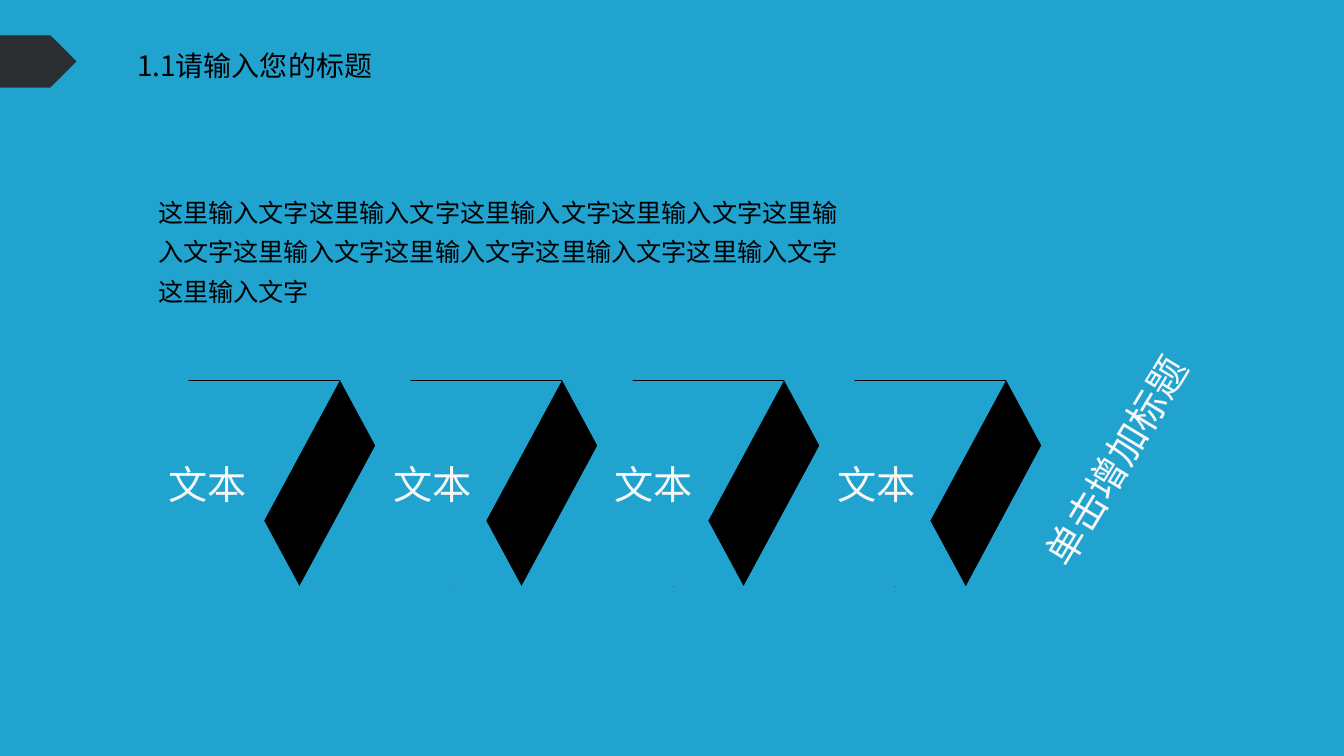
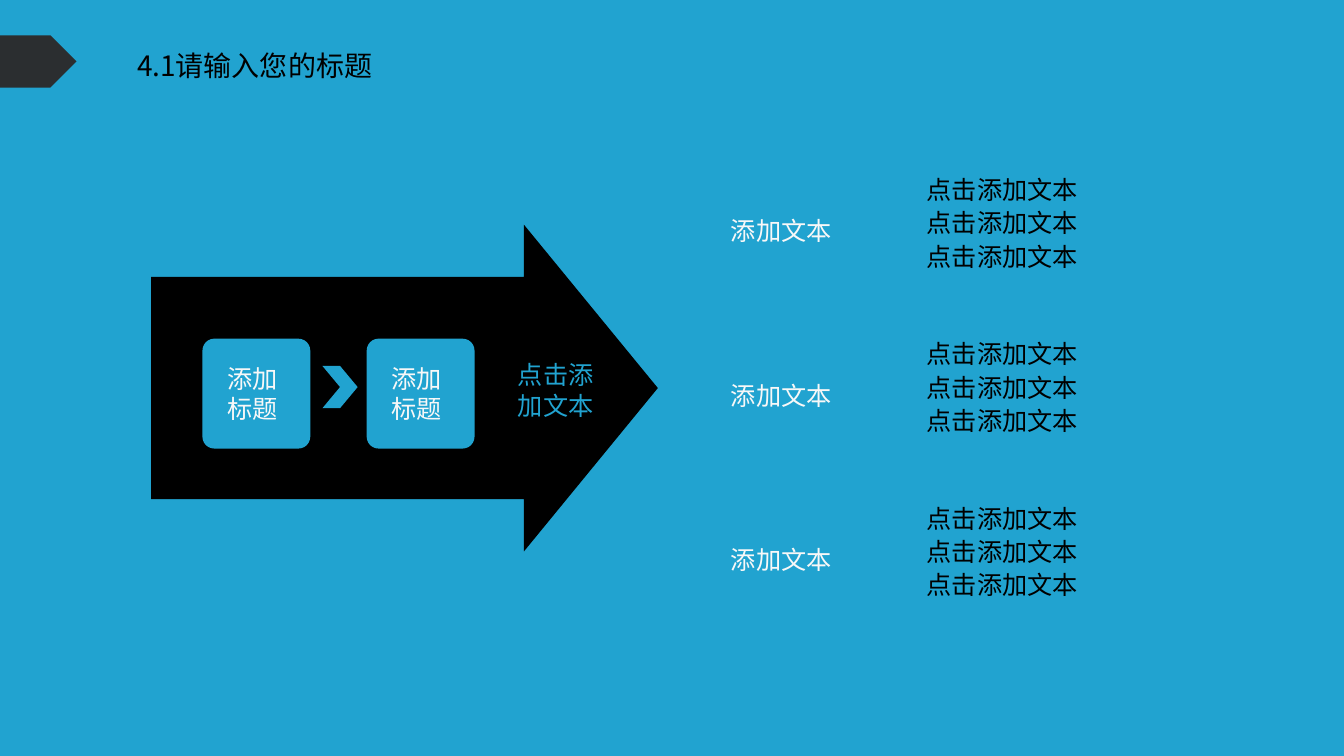
from lxml.etree import SubElement
from pptx import Presentation
from pptx.dml.color import RGBColor
from pptx.enum.shapes import MSO_SHAPE
from pptx.enum.text import MSO_ANCHOR, MSO_AUTO_SIZE, PP_ALIGN
from pptx.util import Inches, Pt
from pptx.oxml.ns import qn

COLORS = {"sky": "21A3D0", "ink": "000000", "paper": "F8F8F8", "band": "2B2E30"}
FONT = "Noto Sans CJK SC"
COLUMNS, ROWS = 133.4, 75
TITLE_ONLY = 5


def grid(*cells):
    """Turn grid cells, a tenth of an inch each, into slide lengths."""
    return [Inches(cell / 10) for cell in cells]


class Deck:
    """Shared style and the slide being drawn."""

    def __init__(self):
        self.presentation = Presentation()
        self.presentation.slide_width, self.presentation.slide_height = grid(COLUMNS, ROWS)
        self.fill(self.presentation.slide_master.background, "sky")
        self.slide = None

    def fill(self, target, color):
        target.fill.solid()
        target.fill.fore_color.rgb = RGBColor.from_string(COLORS[color])

    def finish(self, shape, color):
        self.fill(shape, color)
        shape.line.fill.background()
        shape.shadow.inherit = False
        return shape

    def set_text(self, shape, lines, size, color, align=PP_ALIGN.LEFT,
                 anchor=MSO_ANCHOR.TOP, spacing=1.0):
        frame = shape.text_frame
        frame.word_wrap = True
        frame.auto_size = MSO_AUTO_SIZE.NONE
        frame.vertical_anchor = anchor
        for index, line in enumerate(lines):
            paragraph = frame.add_paragraph() if index else frame.paragraphs[0]
            paragraph.alignment = align
            paragraph.line_spacing = spacing
            run = paragraph.add_run()
            run.text = line
            run.font.size = Pt(size)
            run.font.name = FONT
            run.font.color.rgb = RGBColor.from_string(COLORS[color])
            # East Asian typeface
            SubElement(run.font._element, qn("a:ea"), typeface=FONT)

    def new_slide(self, title):
        layout = self.presentation.slide_layouts[TITLE_ONLY]
        self.slide = self.presentation.slides.add_slide(layout)
        heading = self.slide.shapes.title
        heading.left, heading.top, heading.width, heading.height = grid(12.6, 4.3, 25.6, 4.4)
        self.set_text(heading, [title], 20, "ink")
        self.shape(MSO_SHAPE.PENTAGON, (0, 3.5, 7.6, 5.2), "band", 0.5)

    def shape(self, kind, place, color, *adjustments):
        shape = self.slide.shapes.add_shape(kind, *grid(*place))
        for index, value in enumerate(adjustments):
            shape.adjustments[index] = value
        return self.finish(shape, color)

    def text(self, place, lines, size, color, rotation=0, **layout):
        box = self.slide.shapes.add_textbox(*grid(*place))
        box.rotation = rotation
        self.set_text(box, lines, size, color, **layout)

    def outline(self, points, color):
        corners = [grid(*point) for point in points]
        builder = self.slide.shapes.build_freeform(*corners[0])
        builder.add_line_segments(corners[1:], close=True)
        self.finish(builder.convert_to_shape(), color)


def draw_folded_steps(deck):
    deck.new_slide("1.1请输入您的标题")
    pitch, size = 22.04, (26.1, 20.5)

    # Dark folds lie behind the sky-coloured panels
    for step in range(4):
        fold = deck.shape(MSO_SHAPE.PARALLELOGRAM, (18.7 + step * pitch, 37.7, *size), "ink", 0.54)
        fold._element.spPr.xfrm.set("flipH", "1")
    for step, label_left in enumerate((15.7, 38.1, 60, 82.1)):
        deck.shape(MSO_SHAPE.PARALLELOGRAM, (7.6 + step * pitch, 37.8, *size), "sky", 0.54)
        deck.text((label_left, 45.2, 9.9, 5.7), ["文本"], 28, "paper")

    # Closing arrow and its slanted label
    deck.outline([(121, 25.7), (126.8, 40.4), (122.1, 37.9), (117.2, 47), (110.9, 58.3),
                  (95.8, 58.3), (106.8, 37.8), (110.3, 31.7), (105.6, 29.2)], "sky")
    deck.text((98.1, 42.7, 25.6, 5.7), ["单击增加标题"], 28, "paper", rotation=301.1)

    # Introduction
    deck.text((14.7, 18.2, 70.1, 12.4), ["这里输入文字" * 10], 18, "ink", spacing=1.3)


def draw_arrow_process(deck):
    deck.new_slide("4.1请输入您的标题")

    # Big arrow with two tiles
    deck.shape(MSO_SHAPE.RIGHT_ARROW, (15, 22.3, 50.3, 32.4), "ink", 0.68, 0.41)
    deck.text((47.4, 35.2, 15.5, 7.1), ["点击添", "加文本"], 18, "sky", align=PP_ALIGN.CENTER)
    for left in (20.1, 36.4):
        deck.shape(MSO_SHAPE.ROUNDED_RECTANGLE, (left, 33.6, 10.7, 10.9), "sky", 0.11)
        deck.text((left + 1.5, 35.5, 10.3, 7.1), ["添加", "标题"], 18, "paper",
                  anchor=MSO_ANCHOR.MIDDLE)
    deck.shape(MSO_SHAPE.CHEVRON, (32, 36.3, 3.5, 4.2), "sky", 0.5)

    # Three topics, each with three lines
    for topic in range(3):
        top = 16.8 + topic * 16.3
        deck.text((71.1, top + 4.1, 12.9, 4), ["添加文本"], 18, "paper", align=PP_ALIGN.CENTER)
        for line in range(3):
            deck.text((91, top + line * 3.3, 19, 4), ["点击添加文本"], 18, "ink")


def main():
    deck = Deck()
    draw_folded_steps(deck)
    draw_arrow_process(deck)
    deck.presentation.save("out.pptx")


if __name__ == "__main__":
    main()
